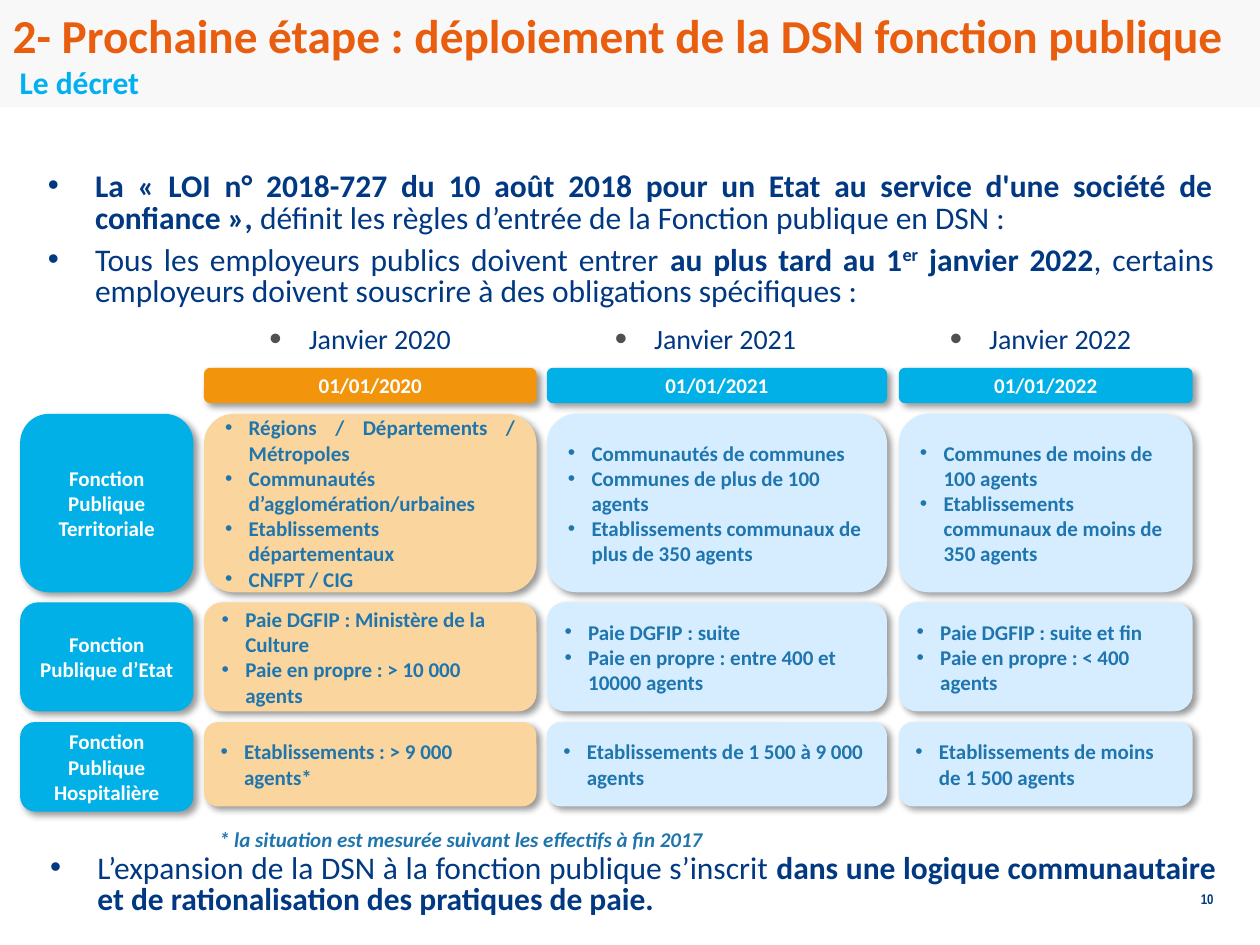
from lxml.etree import SubElement
from pptx import Presentation
from pptx.dml.color import RGBColor
from pptx.enum.shapes import MSO_SHAPE
from pptx.enum.text import MSO_ANCHOR, MSO_AUTO_SIZE, PP_ALIGN
from pptx.oxml.ns import qn
from pptx.util import Pt

COLORS = {
    "band": "F8F8F8", "title": "E95D0F", "subtitle": "00B0F0", "navy": "003882",
    "cyan": "00B0E6", "orange": "F2950C", "light orange": "FAD59D",
    "light blue": "D6EDFF", "cell text": "1F75AE", "white": "FFFFFF",
    "grey": "505050", "black": "000000",
}

# Grid: (left, width) of the columns, (top, height) of the rows
LABEL_LEFT, LABEL_WIDTH = 11.5, 99
COLUMNS = [(116.6, 190), (312.5, 194.4), (513.7, 167.8)]
DATE_TOP, DATE_HEIGHT = 210.2, 20.2
YEARS = [("2020", 110.9), ("2021", 308.2), ("2022", 499.7)]
ROWS = [
    ("Fonction Publique Territoriale", 236.5, 102, 102, [
        ["Régions / Départements / Métropoles", "Communautés d’agglomération/urbaines",
         "Etablissements départementaux", "CNFPT / CIG"],
        ["Communautés de communes", "Communes de plus de 100 agents",
         "Etablissements communaux de plus de 350 agents"],
        ["Communes de moins de 100 agents",
         "Etablissements communaux de moins de 350 agents"],
    ]),
    ("Fonction Publique d’Etat", 344.2, 62.3, 62.3, [
        ["Paie DGFIP : Ministère de la Culture", "Paie en propre : > 10 000 agents"],
        ["Paie DGFIP : suite", "Paie en propre : entre 400 et 10000 agents"],
        ["Paie DGFIP : suite et fin", "Paie en propre : < 400 agents"],
    ]),
    ("Fonction Publique Hospitalière", 412.6, 51.1, 48.2, [
        ["Etablissements : > 9 000 agents*"],
        ["Etablissements de 1 500 à 9 000 agents"],
        ["Etablissements de moins de 1 500 agents"],
    ]),
]


def rgb(name):
    return RGBColor.from_string(COLORS[name])


def add_bullet(paragraph, margin, hanging, color=None, percent=None):
    properties = paragraph._p.get_or_add_pPr()
    properties.set("marL", str(Pt(margin)))
    properties.set("indent", str(-Pt(hanging)))
    if color:
        bullet_color = SubElement(properties, qn("a:buClr"))
        SubElement(bullet_color, qn("a:srgbClr"), val=COLORS[color])
    if percent:
        SubElement(properties, qn("a:buSzPct"), val=str(percent * 1000))
    SubElement(properties, qn("a:buFont"), typeface="Arial")
    SubElement(properties, qn("a:buChar"), char="•")


def write_text(shape, paragraphs, size=12, color="navy", bold=False, italic=False,
               font="Calibri", align=PP_ALIGN.LEFT, bullet=None, line_spacing=None,
               space_before=0, anchor=MSO_ANCHOR.TOP):
    """Each paragraph is a string or a list of (text, bold, superscript) runs."""
    frame = shape.text_frame
    frame.word_wrap = True
    frame.auto_size = MSO_AUTO_SIZE.NONE
    frame.vertical_anchor = anchor
    for index, content in enumerate(paragraphs):
        paragraph = frame.add_paragraph() if index else frame.paragraphs[0]
        if bullet:
            add_bullet(paragraph, **bullet)
        paragraph.alignment = align
        if line_spacing:
            paragraph.line_spacing = Pt(line_spacing)
        paragraph.space_before = Pt(space_before if index else 0)
        runs = [(content, bold, False)] if isinstance(content, str) else content
        for text, run_bold, superscript in runs:
            run = paragraph.add_run()
            run.text = text
            run.font.name = font
            run.font.size = Pt(size)
            run.font.bold = run_bold
            run.font.italic = italic
            run.font.color.rgb = rgb(color)
            if superscript:
                run._r.get_or_add_rPr().set("baseline", "30000")


def add_text(slide, left, top, width, height, paragraphs, **text_format):
    box = slide.shapes.add_textbox(Pt(left), Pt(top), Pt(width), Pt(height))
    write_text(box, paragraphs, **text_format)


def add_block(slide, kind, left, top, width, height, fill):
    shape = slide.shapes.add_shape(kind, Pt(left), Pt(top), Pt(width), Pt(height))
    shape.shadow.inherit = False
    shape.fill.solid()
    shape.fill.fore_color.rgb = rgb(fill)
    shape.line.fill.background()
    return shape


def add_card(slide, left, top, width, height, fill, paragraphs, **text_format):
    card = add_block(slide, MSO_SHAPE.ROUNDED_RECTANGLE, left, top, width, height, fill)
    effects = card.element.spPr.find(qn("a:effectLst"))
    shadow = SubElement(effects, qn("a:outerShdw"), blurRad=str(Pt(4)), dist=str(Pt(3)),
                        dir="2700000", algn="tl", rotWithShape="0")
    shadow_color = SubElement(shadow, qn("a:srgbClr"), val=COLORS["black"])
    SubElement(shadow_color, qn("a:alpha"), val="40000")
    write_text(card, paragraphs, bold=True, anchor=MSO_ANCHOR.MIDDLE, **text_format)


def add_title(slide):
    title = slide.shapes.title
    title.left, title.top, title.width, title.height = Pt(0), Pt(0), Pt(720), Pt(51)
    write_text(title, ["2- Prochaine étape : déploiement de la DSN fonction publique",
                       "Le décret"], size=27, color="title", bold=True)
    subtitle = title.text_frame.paragraphs[1]
    subtitle._p.get_or_add_pPr().set("marL", str(Pt(4)))
    subtitle.runs[0].font.size = Pt(18)
    subtitle.runs[0].font.color.rgb = rgb("subtitle")
    # The grey band lies behind the title
    band = add_block(slide, MSO_SHAPE.RECTANGLE, 0, 0, 720, 61.2, "band")
    title.element.addprevious(band.element)


def add_schedule(slide):
    headings = {"color": "white", "align": PP_ALIGN.CENTER}
    year_bullet = {"margin": 58.5, "hanging": 22.5, "color": "grey", "percent": 125}
    # Years and dates
    for index, ((year, year_left), (left, width)) in enumerate(zip(YEARS, COLUMNS)):
        add_text(slide, year_left, 181.4, 188.6, 28, [f"Janvier {year}"], size=16,
                 align=PP_ALIGN.JUSTIFY, bullet=year_bullet, line_spacing=18)
        add_card(slide, left, DATE_TOP, width, DATE_HEIGHT,
                 "cyan" if index else "orange", [f"01/01/{year}"], **headings)
    # Row labels and cells
    for row, (label, top, label_height, height, cells) in enumerate(ROWS):
        add_card(slide, LABEL_LEFT, top, LABEL_WIDTH, label_height, "cyan", [label],
                 **headings)
        for column, ((left, width), items) in enumerate(zip(COLUMNS, cells)):
            first = row == column == 0
            add_card(slide, left, top, width, height,
                     "light blue" if column else "light orange", items,
                     color="cell text", bullet={"margin": 13.5, "hanging": 13.5},
                     align=PP_ALIGN.JUSTIFY if first else PP_ALIGN.LEFT)


def main():
    presentation = Presentation()
    presentation.slide_width, presentation.slide_height = Pt(720), Pt(540)
    slide = presentation.slides.add_slide(presentation.slide_layouts[5])
    add_title(slide)

    # Statements above and below the schedule
    statement = {"size": 18, "align": PP_ALIGN.JUSTIFY, "line_spacing": 18,
                 "space_before": 6, "bullet": {"margin": 27, "hanging": 27}}
    add_text(slide, 20.2, 95, 680.4, 86, [
        [("La « LOI n° 2018-727 du 10 août 2018 pour un Etat au service d'une société "
          "de confiance », ", True, False),
         ("définit les règles d’entrée de la Fonction publique en DSN :", False, False)],
        [("Tous les employeurs publics doivent entrer ", False, False),
         ("au plus tard au 1", True, False), ("er", True, True),
         (" janvier 2022", True, False),
         (", certains employeurs doivent souscrire à des obligations spécifiques :",
          False, False)],
    ], **statement)
    add_text(slide, 21.6, 484.6, 680.4, 50, [
        [("L’expansion de la DSN à la fonction publique s’inscrit ", False, False),
         ("dans une logique communautaire et de rationalisation des pratiques de paie.",
          True, False)],
    ], **statement)

    add_schedule(slide)

    # Footnote and page number
    add_text(slide, 118.1, 465.1, 322.6, 22.3,
             ["* la situation est mesurée suivant les effectifs à fin 2017"],
             color="cell text", bold=True, italic=True, line_spacing=18)
    add_text(slide, 532.8, 505.4, 167.8, 28.8, ["10"], size=8, font="Arial Narrow",
             bold=True, align=PP_ALIGN.RIGHT)
    presentation.save("out.pptx")


if __name__ == "__main__":
    main()
